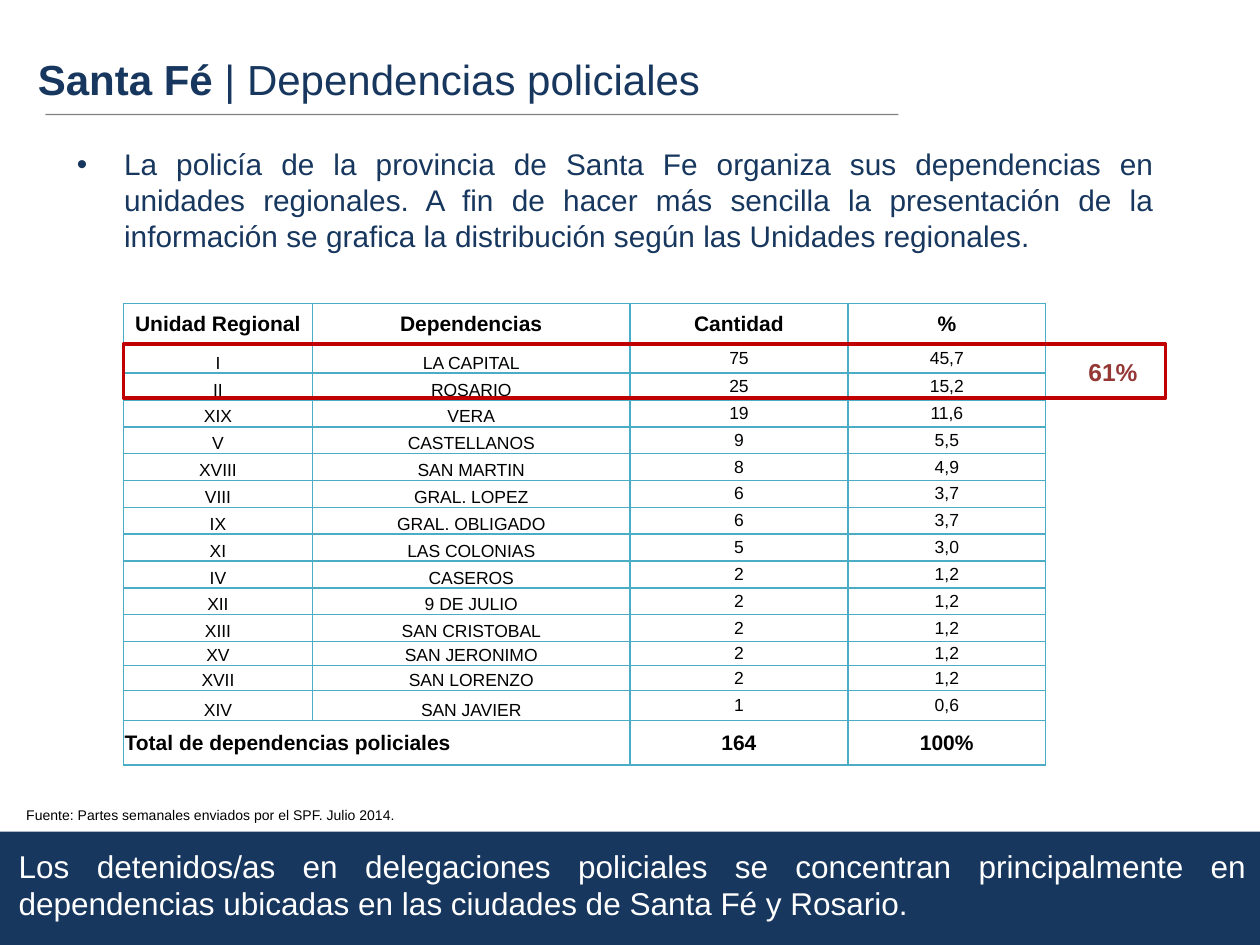
import pptx
import pptx.util
import pptx.dml.color
import pptx.enum.shapes
import pptx.enum.text
import pptx.oxml
import pptx.oxml.ns

COLORS = {"navy": "17375E", "black": "000000", "white": "FFFFFF",
          "grid": "4BACC6", "red": "C00000", "brick": "953735"}
ALIGN = pptx.enum.text.PP_ALIGN
ANCHOR = pptx.enum.text.MSO_ANCHOR
RECTANGLE = pptx.enum.shapes.MSO_SHAPE.RECTANGLE
NS = pptx.oxml.ns.nsdecls("a")

deck = pptx.Presentation()
deck.slide_width = pptx.util.Inches(10)
deck.slide_height = pptx.util.Inches(7.5)
slide = deck.slides.add_slide(deck.slide_layouts[1])


def share(left, top, width, height):
    """Turn percentages of the slide's size into lengths."""
    wide, high = deck.slide_width / 100, deck.slide_height / 100
    return [round(left * wide), round(top * high), round(width * wide), round(height * high)]


def write(frame, text, size, color, bold=False, align=ALIGN.LEFT):
    """Fill a text frame with one formatted paragraph and return it."""
    frame.text = text
    paragraph = frame.paragraphs[0]
    paragraph.alignment = align
    for run in paragraph.runs:
        run.font.name = "Arial"
        run.font.size = pptx.util.Pt(size)
        run.font.bold = bold
        run.font.color.rgb = pptx.dml.color.RGBColor.from_string(COLORS[color])
    return paragraph


# Source note
source = slide.shapes.add_textbox(*share(1.1, 84.7, 31.8, 3.2))
write(source.text_frame, "Fuente: Partes semanales enviados por el SPF. Julio 2014.", 8, "black")

# Title and its rule
title = slide.shapes.title
title.left, title.top, title.width, title.height = share(2, 4.95, 74, 8.25)
title.text_frame.vertical_anchor = ANCHOR.TOP
heading = write(title.text_frame, "Santa Fé", 24, "navy", bold=True)
topic = heading.add_run()
topic.text = " | Dependencias policiales"
topic.font.name = "Arial"
topic.font.size = pptx.util.Pt(24)
topic.font.bold = False
topic.font.color.rgb = pptx.dml.color.RGBColor.from_string(COLORS["navy"])

left, top, width, _ = share(3.6, 12.13, 67.7, 0)
rule = slide.shapes.add_connector(pptx.enum.shapes.MSO_CONNECTOR.STRAIGHT, left, top, left + width, top)
rule.line.width = pptx.util.Pt(0.75)
rule.line.color.rgb = pptx.dml.color.RGBColor.from_string(COLORS["black"])
rule_color = rule.line._ln.find(".//" + pptx.oxml.ns.qn("a:srgbClr"))
rule_color.append(pptx.oxml.parse_xml(f'<a:alpha {NS} val="50000"/>'))
rule._element.spPr.append(pptx.oxml.parse_xml(f"<a:effectLst {NS}/>"))

# Introductory bullet
intro = slide.placeholders[1]
intro.left, intro.top, intro.width, intro.height = share(5.1, 14.8, 87.5, 11.05)
bullet = write(
    intro.text_frame,
    "La policía de la provincia de Santa Fe organiza sus dependencias en unidades regionales. "
    "A fin de hacer más sencilla la presentación de la información se grafica la distribución "
    "según las Unidades regionales.", 17, "navy", align=ALIGN.JUSTIFY)
bullet.space_before = pptx.util.Pt(0)
indent = share(3.75, 0, 0, 0)[0]
bullet_format = bullet._p.get_or_add_pPr()
bullet_format.set("marL", str(indent))
bullet_format.set("indent", str(-indent))
bullet_format.append(pptx.oxml.parse_xml(f'<a:buChar {NS} char="•"/>'))

# Band behind the conclusion
band = slide.shapes.add_shape(RECTANGLE, *share(0, 88, 100, 12.27))
band.shadow.inherit = False
band.fill.solid()
band.fill.fore_color.rgb = pptx.dml.color.RGBColor.from_string(COLORS["navy"])
band.line.fill.background()

# Police units by region
units = [
    ("Unidad Regional", "Dependencias", "Cantidad", "%"),
    ("I", "LA CAPITAL", "75", "45,7"),
    ("II", "ROSARIO", "25", "15,2"),
    ("XIX", "VERA", "19", "11,6"),
    ("V", "CASTELLANOS", "9", "5,5"),
    ("XVIII", "SAN MARTIN", "8", "4,9"),
    ("VIII", "GRAL. LOPEZ", "6", "3,7"),
    ("IX", "GRAL. OBLIGADO", "6", "3,7"),
    ("XI", "LAS COLONIAS", "5", "3,0"),
    ("IV", "CASEROS", "2", "1,2"),
    ("XII", "9 DE JULIO", "2", "1,2"),
    ("XIII", "SAN CRISTOBAL", "2", "1,2"),
    ("XV", "SAN JERONIMO", "2", "1,2"),
    ("XVII", "SAN LORENZO", "2", "1,2"),
    ("XIV", "SAN JAVIER", "1", "0,6"),
    ("Total de dependencias policiales", "", "164", "100%"),
]
column_shares = [15, 25.2, 17.3, 15.7]
row_shares = [4.2, 3.15] + [2.84] * 10 + [2.55, 2.65, 3.2, 4.7]
last = len(units) - 1
table = slide.shapes.add_table(
    len(units), len(column_shares),
    *share(9.8, 32.13, sum(column_shares), sum(row_shares))).table
for column, part in zip(table.columns, column_shares):
    column.width = share(0, 0, part, 0)[2]
for row, part in zip(table.rows, row_shares):
    row.height = share(0, 0, 0, part)[3]
table.cell(last, 0).merge(table.cell(last, 1))

for r, unit in enumerate(units):
    emphasized = r in (0, last)
    for c, value in enumerate(unit):
        cell = table.cell(r, c)
        inset = pptx.util.Inches(0.01 if emphasized else 0)
        cell.margin_left = cell.margin_right = cell.margin_top = inset
        cell.margin_bottom = 0
        cell.vertical_anchor = ANCHOR.MIDDLE if emphasized or c > 1 else ANCHOR.BOTTOM
        cell.fill.background()
        for position, side in enumerate(("lnL", "lnR", "lnT", "lnB")):
            cell._tc.get_or_add_tcPr().insert(position, pptx.oxml.parse_xml(
                f'<a:{side} {NS} w="12700"><a:solidFill><a:srgbClr val="{COLORS["grid"]}"/>'
                f'</a:solidFill></a:{side}>'))
        if not cell.is_spanned:
            write(cell.text_frame, value, 12 if emphasized else 10, "black", emphasized,
                  ALIGN.LEFT if (r, c) == (last, 0) else ALIGN.CENTER)

# Highlight of the two largest units
highlight = slide.shapes.add_shape(RECTANGLE, *share(9.8, 36.4, 82.7, 5.73))
highlight.shadow.inherit = False
highlight.fill.background()
highlight.line.width = pptx.util.Pt(2)
highlight.line.color.rgb = pptx.dml.color.RGBColor.from_string(COLORS["red"])
combined = slide.shapes.add_textbox(*share(85.4, 37.07, 5.9, 4.53))
write(combined.text_frame, "61%", 14, "brick", bold=True)

# Conclusion
conclusion = slide.shapes.add_textbox(*share(0.5, 88.93, 99.4, 9.47))
conclusion.text_frame.word_wrap = True
write(conclusion.text_frame,
      "Los detenidos/as en delegaciones policiales se concentran principalmente en "
      "dependencias ubicadas en las ciudades de Santa Fé y Rosario.",
      18, "white", align=ALIGN.JUSTIFY)

deck.save("out.pptx")
